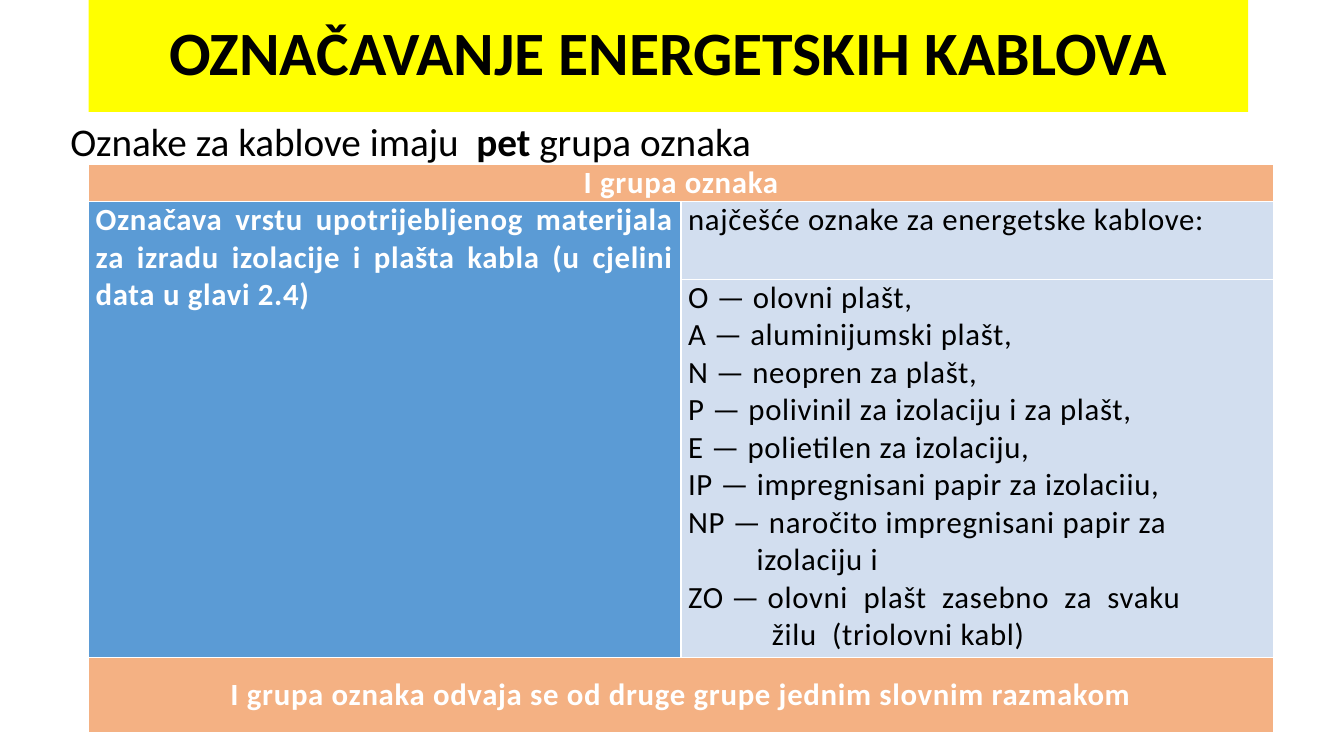
from dataclasses import dataclass
from pptx import Presentation
from pptx import util as u
from pptx.dml.color import RGBColor
from pptx.enum import shapes, text

MID, TOP = text.MSO_ANCHOR.MIDDLE, text.MSO_ANCHOR.TOP
LEFT, CENTER, JUST = (text.PP_ALIGN.LEFT, text.PP_ALIGN.CENTER,
                      text.PP_ALIGN.JUSTIFY)


@dataclass(frozen=True)
class Theme:
    face: str = "Calibri"
    black: str = "000000"
    white: str = "FFFFFF"
    yellow: str = "FFFF00"
    orange: str = "F4B183"
    blue: str = "5B9BD5"
    pale: str = "D2DEEF"
    head: int = 44
    lead: int = 28
    body: int = 22


T = Theme()

CODES = [
    ("O — olovni plašt,", 0),
    ("A — aluminijumski plašt,", 0),
    ("N — neopren za plašt,", 0),
    ("P — polivinil za izolaciju i za plašt,", 0),
    ("E — polietilen za izolaciju,", 0),
    ("IP — impregnisani papir za izolaciiu,", 0),
    ("NP — naročito impregnisani papir za", 0),
    ("izolaciju i", 0.68),
    ("ZO — olovni  plašt  zasebno  za  svaku", 0),
    ("žilu  (triolovni kabl)", 0.83),
]


def rgb(code):
    return RGBColor.from_string(code)


def paint(item, color):
    item.fill.solid()
    item.fill.fore_color.rgb = rgb(color)


def write(para, words, size, color, bold=False, space=0):
    run = para.add_run()
    run.text = words
    looks = {"name": T.face, "size": u.Pt(size), "bold": bold}
    for key, value in looks.items():
        setattr(run.font, key, value)
    run.font.color.rgb = rgb(color)
    if space:
        run.font._element.set("spc", str(space))


def title(slide, box):
    bar = slide.shapes.add_shape(shapes.MSO_SHAPE.RECTANGLE, *box)
    bar.shadow.inherit = False
    paint(bar, T.yellow)
    bar.line.fill.background()
    bar.text_frame.vertical_anchor = MID
    para = bar.text_frame.paragraphs[0]
    para.alignment, para.line_spacing = CENTER, 0.9
    write(para, "OZNAČAVANJE ENERGETSKIH KABLOVA", T.head, T.black, True)


def lead(slide, box):
    frame = slide.shapes.add_textbox(*box).text_frame
    frame.word_wrap = True
    para = frame.paragraphs[0]
    for words, bold in (("Oznake za kablove imaju  ", False), ("pet", True),
                        (" grupa oznaka", False)):
        write(para, words, T.lead, T.black, bold)


def fill(cell, lines, back, color, bold, align, anchor=TOP):
    """Fill a cell with (words, indent in inches) lines."""
    paint(cell, back)
    looks = {"margin_left": u.Inches(0.07), "margin_right": u.Inches(0.07),
             "margin_top": 0, "margin_bottom": 0, "vertical_anchor": anchor}
    for key, value in looks.items():
        setattr(cell, key, value)
    frame = cell.text_frame
    for i, (words, indent) in enumerate(lines):
        para = frame.add_paragraph() if i else frame.paragraphs[0]
        para.alignment = align
        if indent:
            para._p.get_or_add_pPr().set("marL", str(u.Inches(indent)))
        write(para, words, T.body, color, bold, 50)


def groups(slide, box, rows):
    """Place the table of the first group; rows are shares of its height."""
    grid = slide.shapes.add_table(len(rows), 2, *box).table
    grid.horz_banding = False
    for row, share in zip(grid.rows, rows):
        row.height = int(box[3] * share / sum(rows))
    for first, last in (((0, 0), (0, 1)), ((1, 0), (2, 0)), ((3, 0), (3, 1))):
        grid.cell(*first).merge(grid.cell(*last))

    band = (T.orange, T.white, True, CENTER, MID)
    fill(grid.cell(0, 0), [("I grupa oznaka", 0)], *band)
    fill(grid.cell(3, 0), [("I grupa oznaka odvaja se od druge grupe "
                            "jednim slovnim razmakom", 0)], *band)
    fill(grid.cell(1, 0), [("Označava vrstu upotrijebljenog materijala za "
                            "izradu izolacije i plašta kabla (u cjelini data "
                            "u glavi 2.4)", 0)], T.blue, T.white, True, JUST)
    fill(grid.cell(1, 1), [("najčešće oznake za energetske kablove:", 0)],
         T.pale, T.black, False, JUST)
    fill(grid.cell(2, 1), CODES, T.pale, T.black, False, LEFT)


def main():
    deck = Presentation()
    deck.slide_width, deck.slide_height = u.Inches(13.33), u.Inches(7.5)
    slide = deck.slides.add_slide(deck.slide_layouts[6])

    def box(*sides):
        return [u.Inches(side) for side in sides]

    title(slide, box(0.88, 0, 11.5, 1.11))
    lead(slide, box(0.6, 1.11, 12.32, 0.56))
    groups(slide, box(0.88, 1.63, 11.75, 5.64), (0.37, 0.77, 3.75, 0.75))
    deck.save("out.pptx")


if __name__ == "__main__":
    main()
